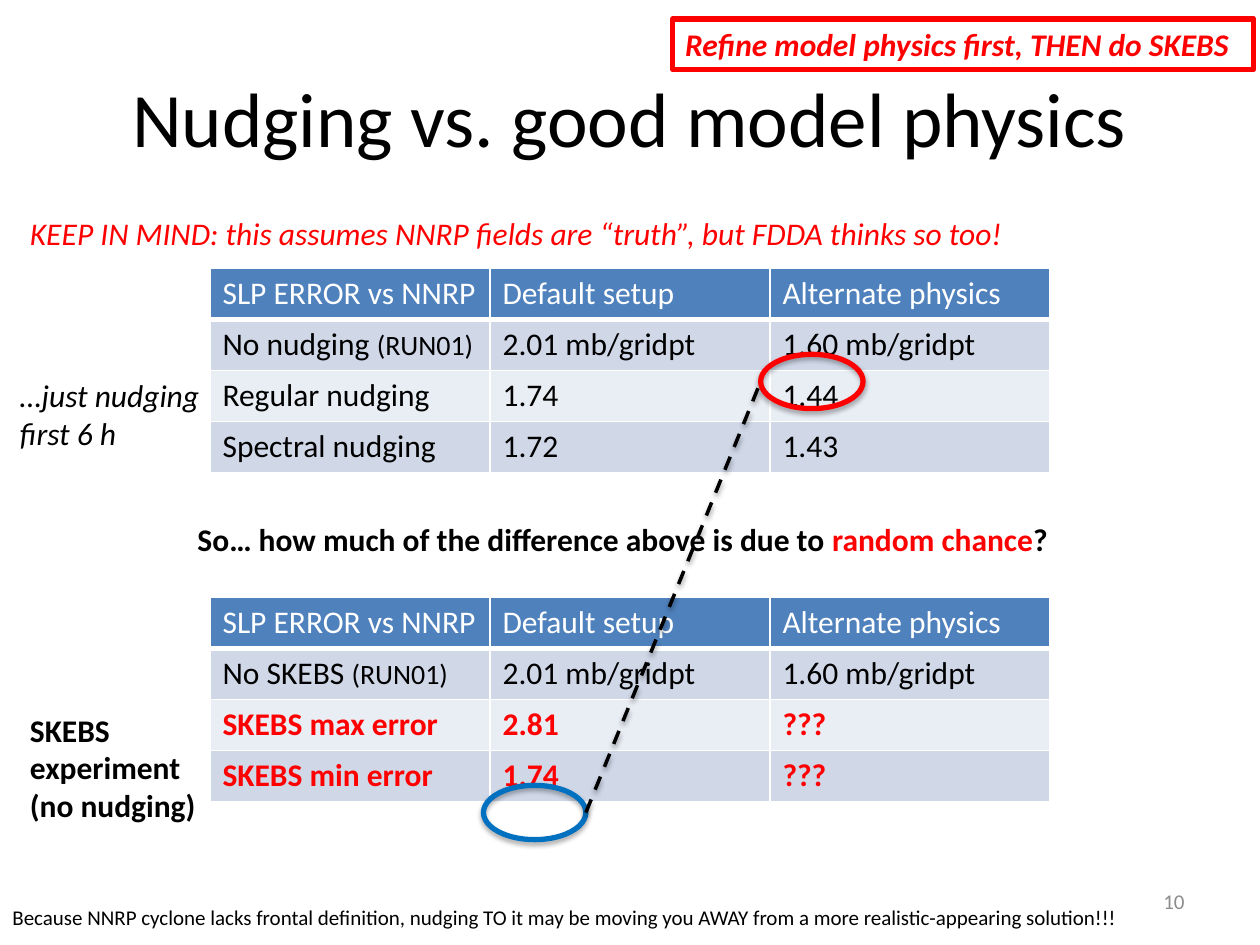
from lxml.etree import SubElement
from pptx import Presentation
from pptx.dml.color import RGBColor
from pptx.enum.dml import MSO_LINE
from pptx.enum.shapes import MSO_CONNECTOR, MSO_SHAPE
from pptx.enum.text import MSO_ANCHOR, PP_ALIGN
from pptx.oxml.ns import qn
from pptx.util import Pt

BLACK = RGBColor(0x00, 0x00, 0x00)
WHITE = RGBColor(0xFF, 0xFF, 0xFF)
RED = RGBColor(0xFF, 0x00, 0x00)
BLUE = RGBColor(0x00, 0x70, 0xC0)
GRAY = RGBColor(0x8C, 0x8C, 0x8C)
HEADER_FILL = RGBColor(0x4F, 0x81, 0xBD)
DARK_BAND = RGBColor(0xD0, 0xD8, 0xE8)
LIGHT_BAND = RGBColor(0xE9, 0xED, 0xF4)


def write_runs(paragraph, runs, size, bold=False, italic=False):
    for text, color in runs:
        run = paragraph.add_run()
        run.text = text
        run.font.name = "Calibri"
        run.font.size = Pt(12 + size - 14 if text == "(RUN01)" else size)
        if text == "(RUN01)":
            run.font.size = Pt(16)
        run.font.bold = bold
        run.font.italic = italic
        run.font.color.rgb = color


def add_shadow(shape, opacity, distance):
    effects = SubElement(shape._element.spPr, qn("a:effectLst"))
    shadow = SubElement(effects, qn("a:outerShdw"), blurRad=str(Pt(3.1)),
                        dist=str(Pt(distance)), dir="5400000", rotWithShape="0")
    color = SubElement(shadow, qn("a:srgbClr"), val=str(BLACK))
    SubElement(color, qn("a:alpha"), val=str(opacity * 1000))


presentation = Presentation()
presentation.slide_width, presentation.slide_height = Pt(720), Pt(540)
slide = presentation.slides.add_slide(presentation.slide_layouts[6])
shapes = slide.shapes

for left, top, width, height, text, size, color, align in [
    (36, 21.6, 648, 90, "Nudging vs. good model physics", 44, BLACK, PP_ALIGN.CENTER),
    (516, 500.5, 168, 28.75, "10", 12, GRAY, PP_ALIGN.RIGHT),
]:
    heading = shapes.add_textbox(Pt(left), Pt(top), Pt(width), Pt(height)).text_frame
    heading.word_wrap = True
    heading.vertical_anchor = MSO_ANCHOR.MIDDLE
    heading.paragraphs[0].alignment = align
    write_runs(heading.paragraphs[0], [(text, color)], size)

header = ["SLP ERROR vs NNRP", "Default setup", "Alternate physics"]
nudging_rows = [
    header,
    ["No nudging (RUN01)", "2.01 mb/gridpt", "1.60 mb/gridpt"],
    ["Regular nudging", "1.74", "1.44"],
    ["Spectral nudging", "1.72", "1.43"],
]
skebs_rows = [
    header,
    ["No SKEBS (RUN01)", "2.01 mb/gridpt", "1.60 mb/gridpt"],
    ["SKEBS max error", "2.81", "???"],
    ["SKEBS min error", "1.74", "???"],
]
for top, rows, result_color in [(153.2, nudging_rows, BLACK), (341.2, skebs_rows, RED)]:
    errors = shapes.add_table(4, 3, Pt(120), Pt(top), Pt(480), Pt(116.8)).table
    for row_index, row in enumerate(rows):
        errors.rows[row_index].height = Pt(29.2)
        color = [WHITE, BLACK, result_color, result_color][row_index]
        fill = [HEADER_FILL, DARK_BAND, LIGHT_BAND, DARK_BAND][row_index]
        for column_index, text in enumerate(row):
            cell = errors.cell(row_index, column_index)
            label, run_tag, _ = text.partition("(RUN01)")
            runs = [(part, color) for part in (label, run_tag) if part]
            write_runs(cell.text_frame.paragraphs[0], runs, 18, bold=color == RED)
            properties = cell._tc.get_or_add_tcPr()
            for side in ("lnL", "lnR", "lnT", "lnB"):
                weight = 3 if row_index == 0 and side == "lnB" else 1
                border = SubElement(properties, qn(f"a:{side}"), w=str(Pt(weight)))
                border_fill = SubElement(border, qn("a:solidFill"))
                SubElement(border_fill, qn("a:srgbClr"), val=str(WHITE))
            cell.fill.solid()
            cell.fill.fore_color.rgb = fill

question = [("So… how much of the difference above is due to ", BLACK),
            ("random chance", RED), ("?", BLACK)]
skebs_label = [[("SKEBS", BLACK)], [("experiment", BLACK)], [("(no nudging)", BLACK)]]
nudging_label = [[("…just nudging", BLACK)], [("first 6 h", BLACK)]]
caveat = [("KEEP IN MIND: this assumes NNRP fields are “truth”, "
           "but FDDA thinks so too!", RED)]
footnote = [("Because NNRP cyclone lacks frontal definition, nudging TO it may be moving "
             "you AWAY from a more realistic-appearing solution!!!", BLACK)]
for left, top, width, height, lines, size, bold, italic in [
    (105.8, 293.4, 515, 29, [question], 18, True, False),
    (10, 402.5, 110, 72.7, skebs_label, 18, True, False),
    (4.3, 211.3, 124, 51, nudging_label, 18, False, True),
    (10, 119, 583, 29, [caveat], 18, False, True),
    (0, 513.5, 652, 21.8, [footnote], 12, False, False),
]:
    note = shapes.add_textbox(Pt(left), Pt(top), Pt(width), Pt(height)).text_frame
    note.word_wrap = False
    for index, runs in enumerate(lines):
        paragraph = note.add_paragraph() if index else note.paragraphs[0]
        write_runs(paragraph, runs, size, bold, italic)

for left, top, color in [(276.3, 448.8, BLUE), (434.7, 202.5, RED)]:
    highlight = shapes.add_shape(MSO_SHAPE.OVAL, Pt(left), Pt(top), Pt(58.5), Pt(31))
    highlight.fill.background()
    highlight.line.color.rgb = color
    highlight.line.width = Pt(3)
    add_shadow(highlight, 35, 1.8)

comparison = shapes.add_connector(MSO_CONNECTOR.STRAIGHT,
                                  Pt(334.8), Pt(464.3), Pt(434.7), Pt(218))
comparison.line.color.rgb = BLACK
comparison.line.width = Pt(2)
comparison.line.dash_style = MSO_LINE.DASH
add_shadow(comparison, 38, 1.6)

advice = shapes.add_shape(MSO_SHAPE.RECTANGLE, Pt(384.5), Pt(10.8), Pt(332), Pt(29))
advice.shadow.inherit = False
advice.fill.background()
advice.line.color.rgb = RED
advice.line.width = Pt(3)
advice.text_frame.word_wrap = False
advice.text_frame.paragraphs[0].alignment = PP_ALIGN.LEFT
write_runs(advice.text_frame.paragraphs[0],
           [("Refine model physics first, THEN do SKEBS", RED)], 18, bold=True, italic=True)

presentation.save("out.pptx")
